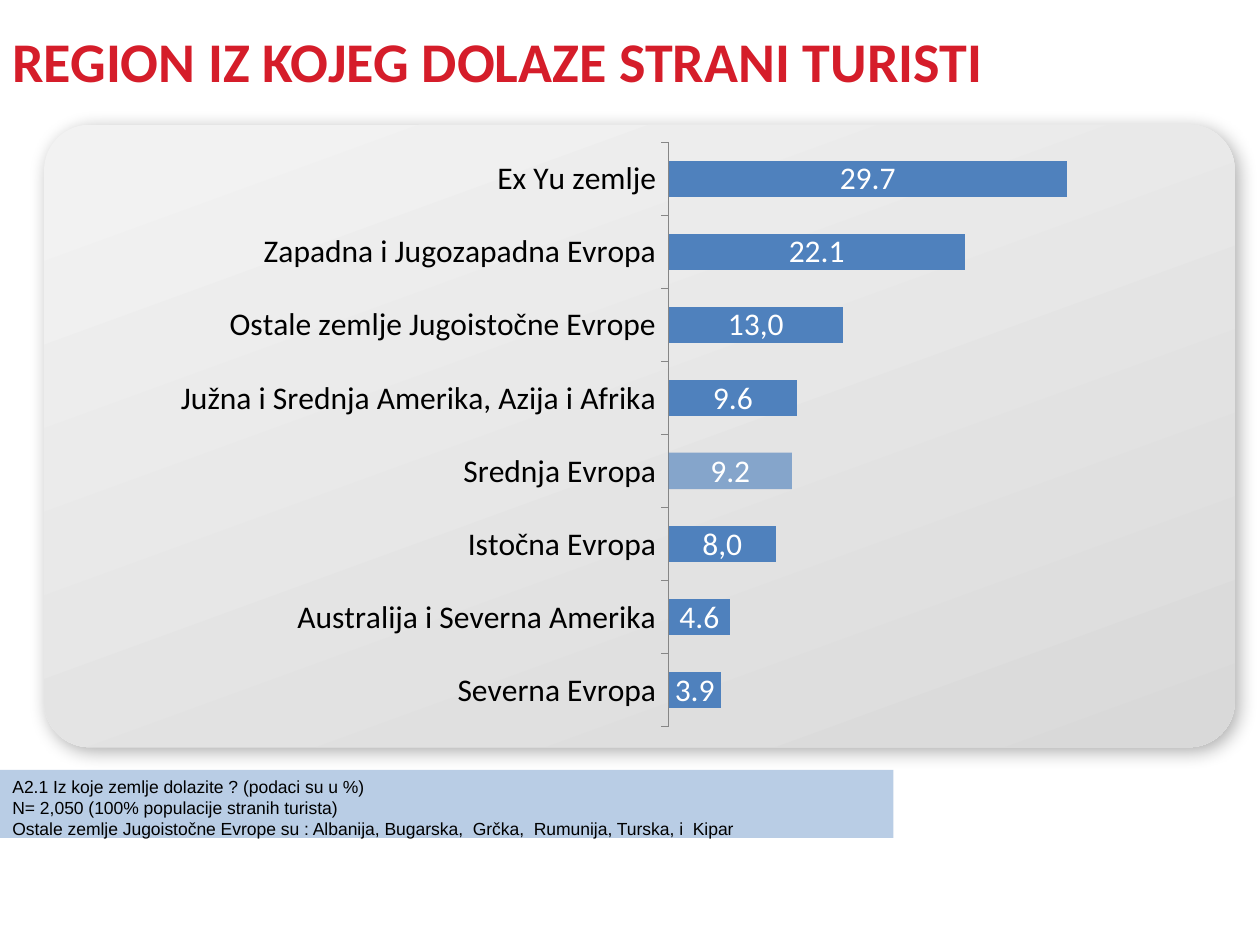
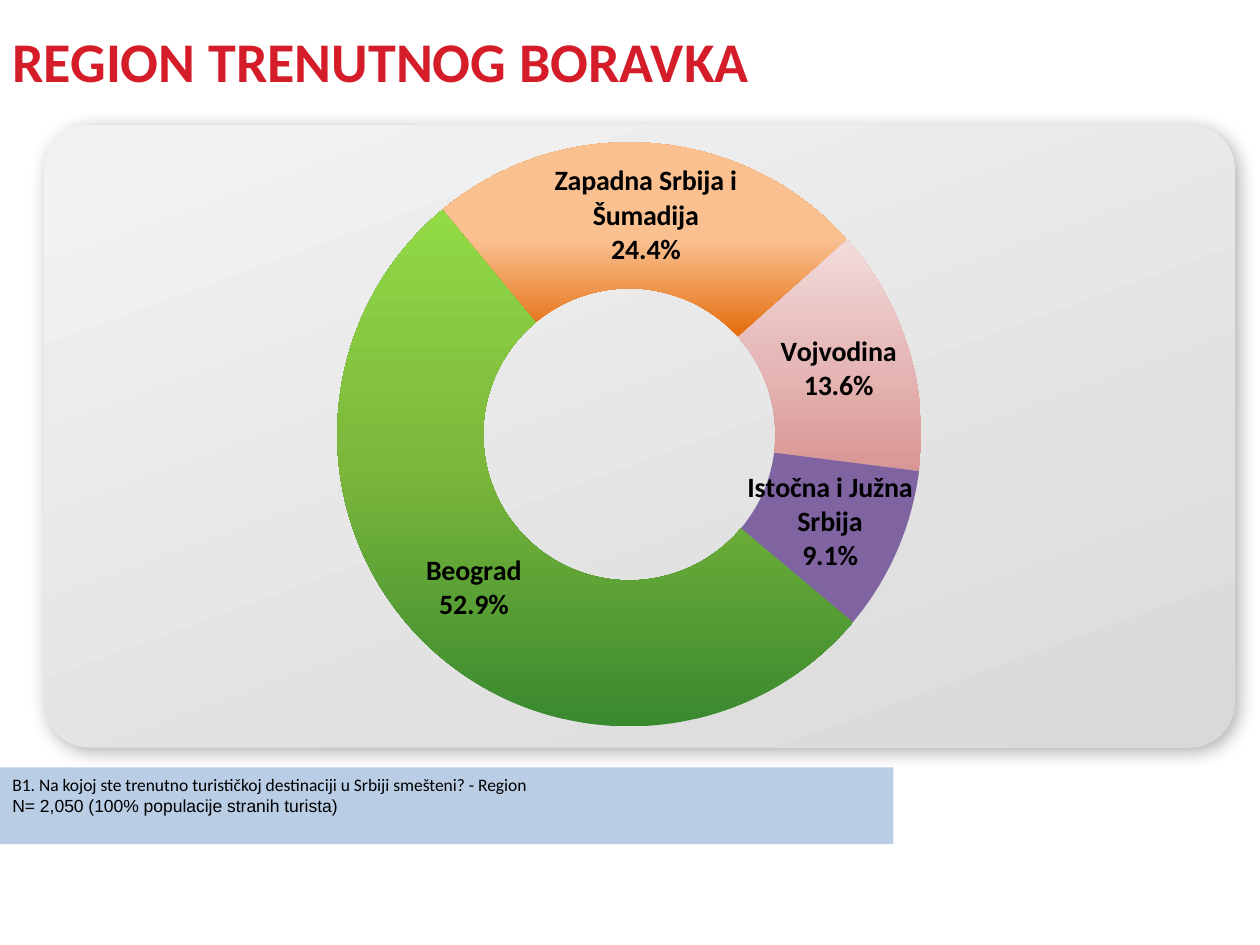
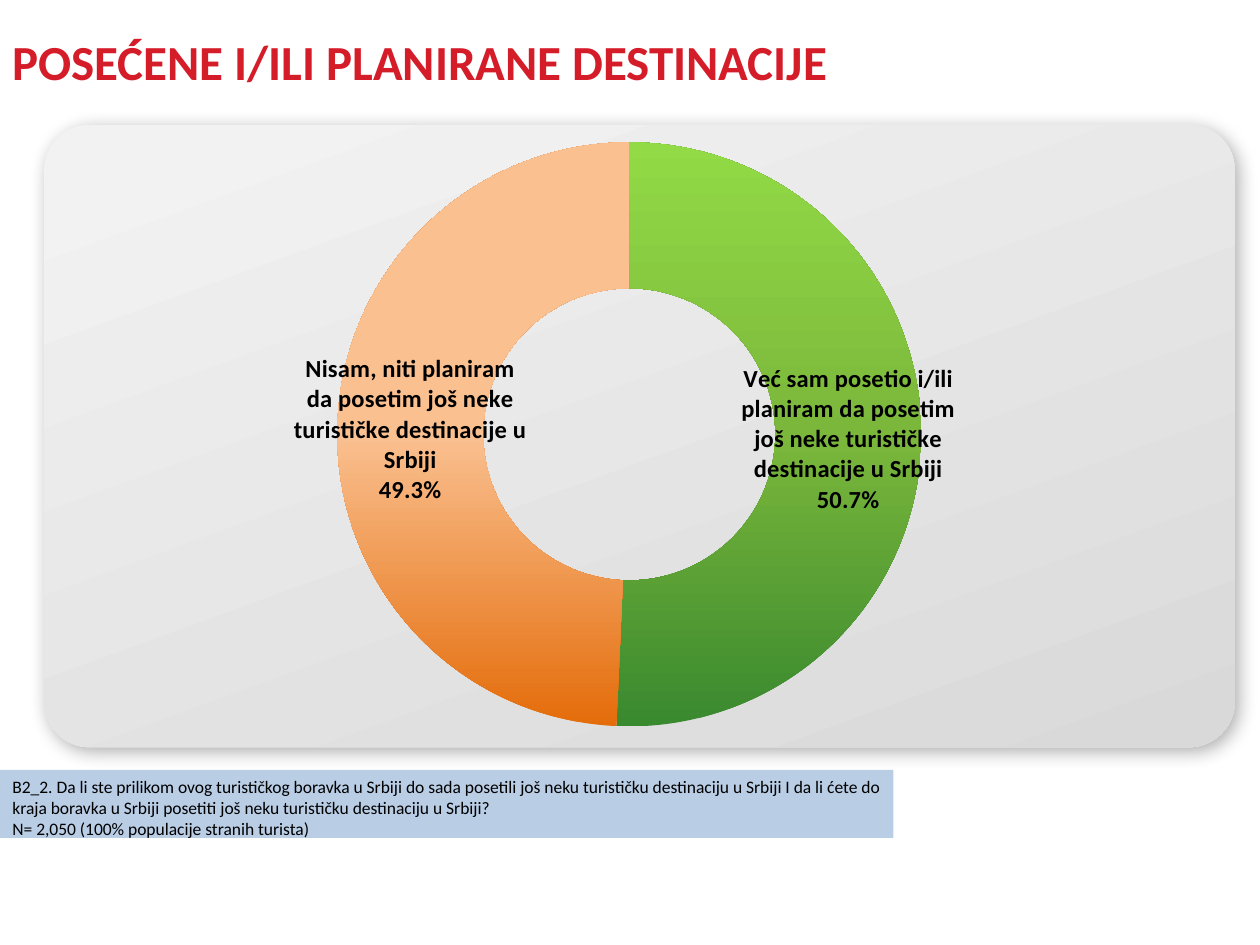
import dataclasses
import typing

import pptx
import pptx.chart.chart
import pptx.chart.data
import pptx.chart.series
import pptx.dml.color
import pptx.dml.fill
import pptx.enum.chart
import pptx.enum.shapes
import pptx.enum.text
import pptx.oxml
import pptx.oxml.ns
import pptx.slide
import pptx.text.text
import pptx.util

EMU_PER_PX = 9144
BLANK_LAYOUT = 6


class Stop(typing.NamedTuple):
    position: int
    color: str


@dataclasses.dataclass(frozen=True)
class Gradient:
    angle: int
    stops: tuple[Stop, ...]


@dataclasses.dataclass(frozen=True)
class Theme:
    heading_font: str = "Calibri"
    plain_font: str = "Arial"
    title_color: str = "D51D2A"
    text_color: str = "000000"
    label_color: str = "FFFFFF"
    band_color: str = "B9CDE5"
    bar_color: str = "4F81BD"
    axis_color: str = "868686"
    purple: str = "8064A2"
    panel: Gradient = Gradient(70, (Stop(5, "F2F2F2"), Stop(100, "D9D9D9")))
    green: Gradient = Gradient(270, (Stop(0, "39892F"), Stop(50, "7BB73B"), Stop(100, "92DA46")))
    orange: Gradient = Gradient(270, (Stop(0, "E46C0A"), Stop(50, "FAC090"), Stop(100, "FAC090")))
    pink: Gradient = Gradient(270, (Stop(0, "D99694"), Stop(50, "E6B9B8"), Stop(100, "F2DCDB")))
    title_size: int = 32
    small_title_size: int = 28
    chart_size: int = 18
    band_size: int = 10


THEME = Theme()


class Box(typing.NamedTuple):
    left: int
    top: int
    width: int
    height: int

    def emu(self) -> tuple[int, ...]:
        return tuple(px(length) for length in self)


class Layout(typing.NamedTuple):
    left: float
    top: float
    width: float
    height: float


class Note(typing.NamedTuple):
    text: str
    font: str = THEME.heading_font


class Segment(typing.NamedTuple):
    category: str
    value: float
    paint: Gradient | str


class Bar(typing.NamedTuple):
    category: str
    value: float
    label: str = ""
    opacity: int = 100


@dataclasses.dataclass(frozen=True)
class Doughnut:
    segments: tuple[Segment, ...]
    label_size: int
    hole: int
    start_angle: int = 0


@dataclasses.dataclass(frozen=True)
class BarChart:
    bars: tuple[Bar, ...]
    maximum: int


@dataclasses.dataclass(frozen=True)
class SurveySlide:
    title: str
    chart: BarChart | Doughnut
    notes: tuple[Note, ...]
    band: Box
    title_size: int = THEME.title_size


SLIDE_SIZE = (1000, 750)
TITLE_BOX = Box(0, -3, 1000, 102)
TITLE_INDENT = 92
PANEL_BOX = Box(35, 99, 945, 494)
PANEL_ROUNDING = 0.073
BAR_BOX = Box(47, 99, 889, 481)
BAR_LAYOUT = Layout(0.544, 0.029, 0.419, 0.964)
DOUGHNUT_BOX = Box(80, 99, 857, 481)
DOUGHNUT_LAYOUT = Layout(0.037, 0.029, 0.905, 0.964)
BAND_BOX = Box(0, 611, 709, 54)
TALL_BAND_BOX = Box(0, 609, 709, 61)
SAMPLE = "N= 2,050 (100% populacije stranih turista)"

SLIDES = (
    SurveySlide(
        "REGION IZ KOJEG DOLAZE STRANI TURISTI",
        BarChart(
            (
                Bar("Severna Evropa", 3.9),
                Bar("Australija i Severna Amerika", 4.6),
                Bar("Istočna Evropa", 8, label="8,0"),
                Bar("Srednja Evropa", 9.2, opacity=63),
                Bar("Južna i Srednja Amerika, Azija i Afrika", 9.6),
                Bar("Ostale zemlje Jugoistočne Evrope", 13, label="13,0"),
                Bar("Zapadna i Jugozapadna Evropa", 22.1),
                Bar("Ex Yu zemlje", 29.7),
            ),
            maximum=35,
        ),
        (
            Note("A2.1 Iz koje zemlje dolazite ? (podaci su u %)", THEME.plain_font),
            Note(SAMPLE, THEME.plain_font),
            Note(
                "Ostale zemlje Jugoistočne Evrope su : Albanija, Bugarska,  Grčka,  "
                "Rumunija, Turska, i  Kipar",
                THEME.plain_font,
            ),
        ),
        BAND_BOX,
    ),
    SurveySlide(
        "REGION TRENUTNOG BORAVKA",
        Doughnut(
            (
                Segment("Beograd", 52.9, THEME.green),
                Segment("Zapadna Srbija i Šumadija", 24.4, THEME.orange),
                Segment("Vojvodina", 13.6, THEME.pink),
                Segment("Istočna i Južna Srbija", 9.1, THEME.purple),
            ),
            label_size=16,
            hole=50,
            start_angle=130,
        ),
        (
            Note("B1. Na kojoj ste trenutno turističkoj destinaciji u Srbiji smešteni? - Region"),
            Note(SAMPLE, THEME.plain_font),
        ),
        TALL_BAND_BOX,
    ),
    SurveySlide(
        "POSEĆENE I/ILI PLANIRANE DESTINACIJE",
        Doughnut(
            (
                Segment(
                    "Već sam posetio i/ili planiram da posetim još neke turističke "
                    "destinacije u Srbiji",
                    50.7,
                    THEME.green,
                ),
                Segment(
                    "Nisam, niti planiram da posetim još neke turističke destinacije u Srbiji",
                    49.3,
                    THEME.orange,
                ),
            ),
            label_size=14,
            hole=30,
        ),
        (
            Note(
                "B2_2. Da li ste prilikom ovog turističkog boravka u Srbiji do sada posetili "
                "još neku turističku destinaciju u Srbiji I da li ćete do kraja boravka u "
                "Srbiji posetiti još neku turističku destinaciju u Srbiji?"
            ),
            Note(SAMPLE),
        ),
        BAND_BOX,
        THEME.small_title_size,
    ),
)


def px(length: int) -> int:
    return length * EMU_PER_PX


def rgb(color: str) -> pptx.dml.color.RGBColor:
    return pptx.dml.color.RGBColor.from_string(color)


def style_font(
    font: pptx.text.text.Font, name: str, size: int, color: str, bold: bool = False
) -> None:
    font.name = name
    font.size = pptx.util.Pt(size)
    font.bold = bold
    font.color.rgb = rgb(color)


def paint_fill(fill: pptx.dml.fill.FillFormat, paint: Gradient | str) -> None:
    fill.solid()
    if isinstance(paint, str):
        fill.fore_color.rgb = rgb(paint)
        return
    stops = "".join(
        f'<a:gs pos="{stop.position * 1000}"><a:srgbClr val="{stop.color}"/></a:gs>'
        for stop in paint.stops
    )
    gradient = pptx.oxml.parse_xml(
        f'<a:gradFill {pptx.oxml.ns.nsdecls("a")} rotWithShape="1"><a:gsLst>{stops}</a:gsLst>'
        f'<a:lin ang="{paint.angle * 60000}" scaled="0"/></a:gradFill>'
    )
    properties = fill._xPr
    properties.replace(properties.find(pptx.oxml.ns.qn("a:solidFill")), gradient)


def add_panel(slide: pptx.slide.Slide) -> None:
    shape = slide.shapes.add_shape(
        pptx.enum.shapes.MSO_SHAPE.ROUNDED_RECTANGLE, *PANEL_BOX.emu()
    )
    shape.adjustments[0] = PANEL_ROUNDING
    paint_fill(shape.fill, THEME.panel)
    shape.line.fill.background()
    shape.shadow.inherit = False
    effects = shape._element.spPr.find(pptx.oxml.ns.qn("a:effectLst"))
    effects.append(
        pptx.oxml.parse_xml(
            f'<a:outerShdw {pptx.oxml.ns.nsdecls("a")} blurRad="{pptx.util.Pt(11)}" '
            f'dist="{pptx.util.Pt(4)}" dir="{45 * 60000}" algn="ctr" rotWithShape="0">'
            '<a:srgbClr val="000000"><a:alpha val="32000"/></a:srgbClr></a:outerShdw>'
        )
    )


def add_title(slide: pptx.slide.Slide, text: str, size: int) -> None:
    frame = slide.shapes.add_textbox(*TITLE_BOX.emu()).text_frame
    frame.word_wrap = True
    frame.vertical_anchor = pptx.enum.text.MSO_ANCHOR.MIDDLE
    paragraph = frame.paragraphs[0]
    properties = paragraph._p.get_or_add_pPr()
    properties.set("marL", str(px(TITLE_INDENT)))
    properties.set("indent", str(-px(TITLE_INDENT)))
    run = paragraph.add_run()
    run.text = text
    style_font(run.font, THEME.heading_font, size, THEME.title_color, bold=True)


def add_band(slide: pptx.slide.Slide, box: Box, notes: tuple[Note, ...]) -> None:
    shape = slide.shapes.add_shape(pptx.enum.shapes.MSO_SHAPE.RECTANGLE, *box.emu())
    shape.shadow.inherit = False
    paint_fill(shape.fill, THEME.band_color)
    shape.line.fill.background()
    frame = shape.text_frame
    frame.word_wrap = True
    frame.vertical_anchor = pptx.enum.text.MSO_ANCHOR.TOP
    for index, note in enumerate(notes):
        paragraph = frame.add_paragraph() if index else frame.paragraphs[0]
        paragraph.alignment = pptx.enum.text.PP_ALIGN.LEFT
        run = paragraph.add_run()
        run.text = note.text
        style_font(run.font, note.font, THEME.band_size, THEME.text_color)


def place_plot(chart: pptx.chart.chart.Chart, layout: Layout) -> None:
    plot_area = chart.plots[0]._element.getparent()
    for existing in plot_area.findall(pptx.oxml.ns.qn("c:layout")):
        plot_area.remove(existing)
    modes = '<c:layoutTarget val="inner"/><c:xMode val="edge"/><c:yMode val="edge"/>'
    sizes = "".join(f'<c:{tag} val="{value}"/>' for tag, value in zip("xywh", layout))
    plot_area.insert(
        0,
        pptx.oxml.parse_xml(
            f'<c:layout {pptx.oxml.ns.nsdecls("c")}><c:manualLayout>{modes}{sizes}'
            "</c:manualLayout></c:layout>"
        ),
    )


def add_chart(
    slide: pptx.slide.Slide,
    kind: pptx.enum.chart.XL_CHART_TYPE,
    box: Box,
    layout: Layout,
    points: typing.Sequence[Bar | Segment],
) -> pptx.chart.chart.Chart:
    data = pptx.chart.data.CategoryChartData()
    data.categories = [point.category for point in points]
    data.add_series("Series 1", [point.value for point in points])
    chart = slide.shapes.add_chart(kind, *box.emu(), data).chart
    chart.has_title = False
    chart.has_legend = False
    style_font(chart.font, THEME.heading_font, THEME.chart_size, THEME.text_color)
    place_plot(chart, layout)
    return chart


def add_bar_chart(slide: pptx.slide.Slide, content: BarChart) -> None:
    chart = add_chart(
        slide, pptx.enum.chart.XL_CHART_TYPE.BAR_STACKED, BAR_BOX, BAR_LAYOUT, content.bars
    )
    plot = chart.plots[0]
    plot.vary_by_categories = False
    plot.gap_width = 100
    plot.overlap = 100
    chart.value_axis.minimum_scale = 0
    chart.value_axis.maximum_scale = content.maximum
    chart.value_axis.has_major_gridlines = False
    chart.value_axis.visible = False
    axis = chart.category_axis
    axis.major_tick_mark = pptx.enum.chart.XL_TICK_MARK.OUTSIDE
    axis.format.line.color.rgb = rgb(THEME.axis_color)
    series = plot.series[0]
    paint_fill(series.format.fill, THEME.bar_color)
    labels = series.data_labels
    labels.show_value = True
    labels.position = pptx.enum.chart.XL_LABEL_POSITION.CENTER
    style_font(labels.font, THEME.heading_font, THEME.chart_size, THEME.label_color)
    for index, bar in enumerate(content.bars):
        if bar.label:
            run = series.points[index].data_label.text_frame.paragraphs[0].add_run()
            run.text = bar.label
            style_font(run.font, THEME.heading_font, THEME.chart_size, THEME.label_color)
        if bar.opacity < 100:
            fill = series.points[index].format.fill
            paint_fill(fill, THEME.bar_color)
            color = fill._xPr.find(".//" + pptx.oxml.ns.qn("a:srgbClr"))
            color.append(
                pptx.oxml.parse_xml(
                    f'<a:alpha {pptx.oxml.ns.nsdecls("a")} val="{bar.opacity * 1000}"/>'
                )
            )


def add_doughnut(slide: pptx.slide.Slide, content: Doughnut) -> None:
    chart = add_chart(
        slide,
        pptx.enum.chart.XL_CHART_TYPE.DOUGHNUT,
        DOUGHNUT_BOX,
        DOUGHNUT_LAYOUT,
        content.segments,
    )
    plot = chart.plots[0]
    plot.vary_by_categories = True
    for tag, value in (("c:firstSliceAng", content.start_angle), ("c:holeSize", content.hole)):
        plot._element.find(pptx.oxml.ns.qn(tag)).set("val", str(value))
    series = plot.series[0]
    for index, segment in enumerate(content.segments):
        paint_fill(series.points[index].format.fill, segment.paint)
    labels = series.data_labels
    labels.show_value = True
    labels.show_category_name = True
    labels.show_percentage = False
    labels.number_format = '#,##0.0"%"'
    labels.number_format_is_linked = False
    style_font(labels.font, THEME.heading_font, content.label_size, THEME.text_color, bold=True)
    separator = pptx.oxml.parse_xml(
        f'<c:separator {pptx.oxml.ns.nsdecls("c")}>\n</c:separator>'
    )
    separator.text = "\n"
    labels._element.find(pptx.oxml.ns.qn("c:showBubbleSize")).addnext(separator)


def add_survey_slide(presentation: typing.Any, content: SurveySlide) -> None:
    slide = presentation.slides.add_slide(presentation.slide_layouts[BLANK_LAYOUT])
    add_panel(slide)
    add_title(slide, content.title, content.title_size)
    if isinstance(content.chart, BarChart):
        add_bar_chart(slide, content.chart)
    else:
        add_doughnut(slide, content.chart)
    add_band(slide, content.band, content.notes)


def main() -> None:
    presentation = pptx.Presentation()
    presentation.slide_width, presentation.slide_height = map(px, SLIDE_SIZE)
    for content in SLIDES:
        add_survey_slide(presentation, content)
    presentation.save("out.pptx")


if __name__ == "__main__":
    main()
